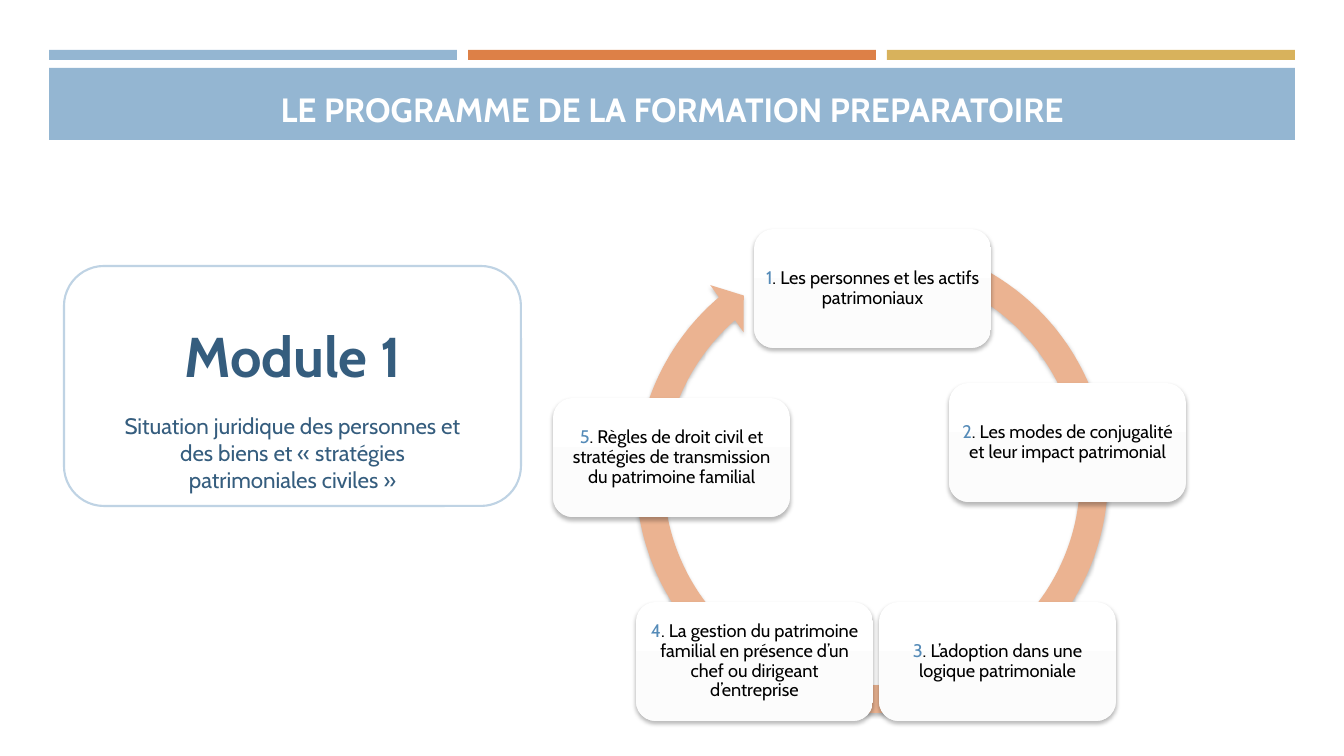
from copy import deepcopy
from typing import NamedTuple

from lxml.etree import SubElement
from pptx import Presentation
from pptx.dml.color import RGBColor
from pptx.enum.shapes import MSO_SHAPE
from pptx.enum.text import MSO_ANCHOR, MSO_AUTO_SIZE, PP_ALIGN
from pptx.oxml.ns import qn
from pptx.shapes.autoshape import Shape
from pptx.slide import Slide
from pptx.text.text import TextFrame
from pptx.util import Emu, Pt

EMU_PER_PX = 914400 / 100.8
FONT = "Cabin"
WHITE = RGBColor(0xFF, 0xFF, 0xFF)
OFF_WHITE = RGBColor(0xFC, 0xFC, 0xFC)
BLACK = RGBColor(0x00, 0x00, 0x00)
BLUE = RGBColor(0x94, 0xB6, 0xD2)
ORANGE = RGBColor(0xDD, 0x80, 0x47)
GOLD = RGBColor(0xD8, 0xB2, 0x5C)
PEACH = RGBColor(0xEB, 0xB3, 0x91)
PALE_BLUE = RGBColor(0xBF, 0xD3, 0xE4)
NUMBER_BLUE = RGBColor(0x55, 0x8B, 0xB8)
DARK_BLUE = RGBColor(0x35, 0x5D, 0x7E)

STRIPE_COLORS = (BLUE, ORANGE, GOLD)
STRIPE_LEFT, STRIPE_WIDTH, STRIPE_STEP = 49, 408, 419
TOPIC_WIDTH, TOPIC_HEIGHT, TOPIC_INSET = 237, 119, 5
CYCLE_ARC = (5544, 330680, 13754900, 17398800, 5757)
TOPIC_GRADIENT = ((0, WHITE), (0.41, OFF_WHITE), (1, WHITE))


class Box(NamedTuple):
    """Place and size in px."""

    left: int
    top: int
    width: int
    height: int


class Topic(NamedTuple):
    """One step of the training cycle."""

    number: int
    title: str
    left: int
    top: int


TOPICS = (
    Topic(1, "Les personnes et les actifs patrimoniaux", 754, 229),
    Topic(2, "Les modes de conjugalité et leur impact patrimonial", 949, 383),
    Topic(3, "L’adoption dans une logique patrimoniale", 879, 602),
    Topic(4, "La gestion du patrimoine familial en présence d’un chef ou dirigeant d’entreprise", 636, 602),
    Topic(5, "Règles de droit civil et stratégies de transmission du patrimoine familial", 553, 398),
)


def px(length: int) -> Emu:
    """Turn px into EMU."""
    return Emu(round(length * EMU_PER_PX))


def add_block(slide: Slide, kind: MSO_SHAPE, box: Box, color: RGBColor) -> Shape:
    """Add a plain filled shape without outline or shadow."""
    block = slide.shapes.add_shape(kind, *map(px, box))
    block.fill.solid()
    block.fill.fore_color.rgb = color
    block.line.fill.background()
    block.shadow.inherit = False
    return block


def add_soft_shadow(block: Shape) -> None:
    """Give a shape a soft shadow below it."""
    effects = block.element.spPr.find(qn("a:effectLst"))
    shadow = SubElement(effects, qn("a:outerShdw"), blurRad=str(Pt(3)), dist=str(Pt(2)),
                        dir="5400000", algn="ctr", rotWithShape="0")
    black = SubElement(shadow, qn("a:srgbClr"), val=str(BLACK))
    SubElement(black, qn("a:alpha"), val="28000")


def set_gradient(block: Shape) -> None:
    """Fill a shape with the vertical topic gradient."""
    block.fill.gradient()
    block.fill.gradient_angle = 270
    stop_list = block.element.spPr.find(f".//{qn('a:gsLst')}")
    stop_list.insert(1, deepcopy(stop_list[0]))
    for stop, (position, color) in zip(block.fill.gradient_stops, TOPIC_GRADIENT):
        stop.position = position
        stop.color.rgb = color


def write_centred(frame: TextFrame, size: int, runs: tuple[tuple[str, RGBColor], ...],
                  bold: bool = False) -> None:
    """Write coloured runs in one centred paragraph."""
    frame.word_wrap = True
    paragraph = frame.paragraphs[0]
    paragraph.alignment = PP_ALIGN.CENTER
    for text, color in runs:
        run = paragraph.add_run()
        run.text = text
        run.font.name = FONT
        run.font.size = Pt(size)
        run.font.bold = bold
        run.font.color.rgb = color


def add_header(slide: Slide) -> None:
    """Add the stripes, the band and the title."""
    for index, color in enumerate(STRIPE_COLORS):
        left = STRIPE_LEFT + index * STRIPE_STEP
        add_block(slide, MSO_SHAPE.RECTANGLE, Box(left, 50, STRIPE_WIDTH, 10), color)
    add_block(slide, MSO_SHAPE.RECTANGLE, Box(49, 68, 1246, 72), BLUE)
    title = slide.shapes.add_textbox(*map(px, Box(64, 78, 1216, 56))).text_frame
    title.vertical_anchor = MSO_ANCHOR.BOTTOM
    write_centred(title, 24, (("LE PROGRAMME DE LA FORMATION PREPARATOIRE", WHITE),), bold=True)


def add_topic(slide: Slide, topic: Topic) -> None:
    """Add one topic card of the cycle."""
    box = Box(topic.left, topic.top, TOPIC_WIDTH, TOPIC_HEIGHT)
    card = add_block(slide, MSO_SHAPE.ROUNDED_RECTANGLE, box, WHITE)
    set_gradient(card)
    add_soft_shadow(card)
    frame = card.text_frame
    frame.vertical_anchor = MSO_ANCHOR.MIDDLE
    frame.margin_left = frame.margin_right = px(TOPIC_INSET)
    frame.margin_top = frame.margin_bottom = px(TOPIC_INSET)
    write_centred(frame, 13, ((str(topic.number), NUMBER_BLUE), (f". {topic.title}", BLACK)))
    frame.paragraphs[0].line_spacing = 0.9


def add_cycle(slide: Slide) -> None:
    """Add the circular arrow and its topics."""
    arrow = add_block(slide, MSO_SHAPE.CIRCULAR_ARROW, Box(621, 226, 502, 502), PEACH)
    for index, value in enumerate(CYCLE_ARC):
        arrow.adjustments[index] = value / 100_000
    add_soft_shadow(arrow)
    for topic in TOPICS:
        add_topic(slide, topic)


def add_module(slide: Slide) -> None:
    """Add the module card and its subject."""
    module = add_block(slide, MSO_SHAPE.ROUNDED_RECTANGLE, Box(64, 266, 457, 240), WHITE)
    module.line.color.rgb = PALE_BLUE
    module.line.width = Pt(1.5)
    module.text_frame.vertical_anchor = MSO_ANCHOR.MIDDLE
    module.text_frame.margin_bottom = px(67)
    write_centred(module.text_frame, 40, (("Module 1", DARK_BLUE),), bold=True)

    subject = slide.shapes.add_textbox(*map(px, Box(105, 407, 375, 92))).text_frame
    subject.auto_size = MSO_AUTO_SIZE.SHAPE_TO_FIT_TEXT
    subject_text = "Situation juridique des personnes et des biens et « stratégies patrimoniales civiles »"
    write_centred(subject, 16, ((subject_text, DARK_BLUE),))


def main() -> None:
    """Build and save the slide."""
    presentation = Presentation()
    presentation.slide_width, presentation.slide_height = px(1344), px(756)
    slide = presentation.slides.add_slide(presentation.slide_layouts[6])
    add_header(slide)
    add_cycle(slide)
    add_module(slide)
    presentation.save("out.pptx")


if __name__ == "__main__":
    main()
